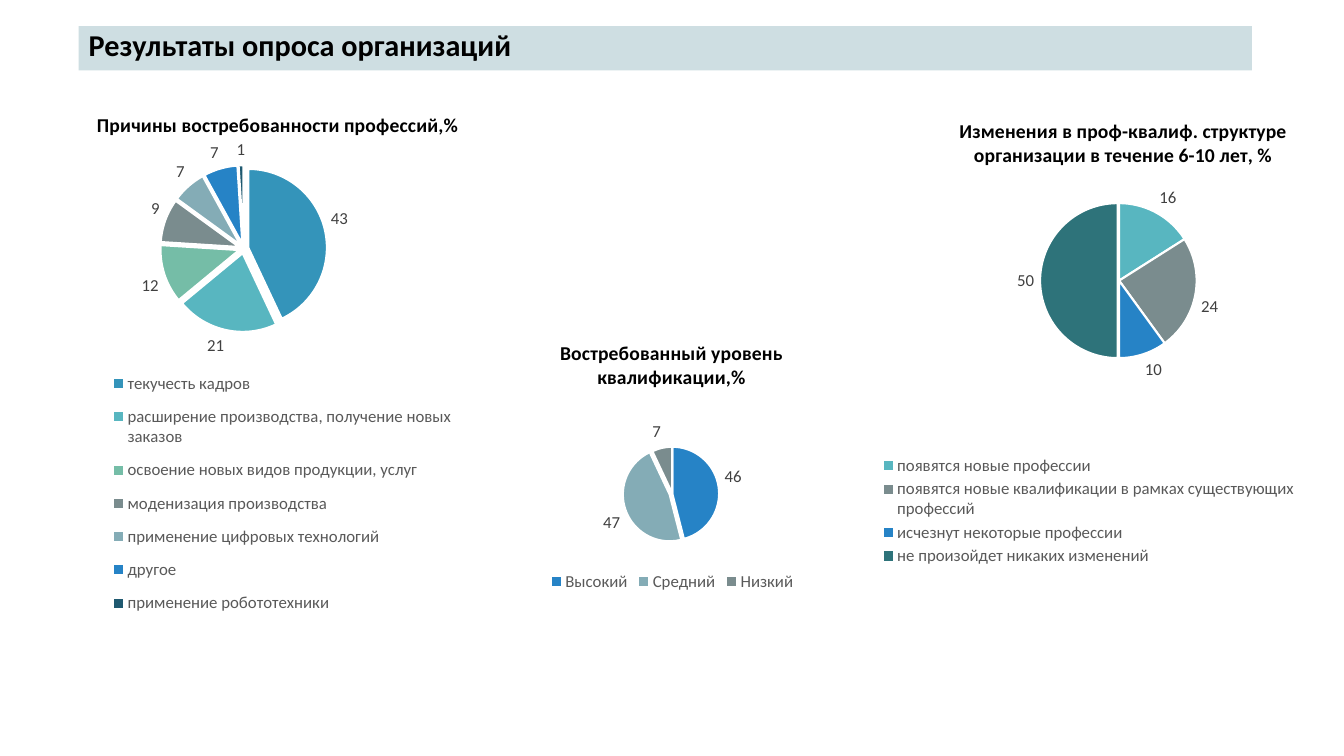
"""Build a slide with three pie charts on an employer survey, chart layouts in percent."""
from pptx import Presentation
from pptx.chart.data import CategoryChartData
from pptx.dml.color import RGBColor
from pptx.enum.chart import XL_CHART_TYPE, XL_LABEL_POSITION, XL_LEGEND_POSITION
from pptx.enum.shapes import MSO_SHAPE
from pptx.enum.text import MSO_ANCHOR, PP_ALIGN
from pptx.oxml import parse_xml
from pptx.oxml.ns import nsdecls
from pptx.util import Pt

PIE = XL_CHART_TYPE.PIE
OUTSIDE = XL_LABEL_POSITION.OUTSIDE_END
BOTTOM = XL_LEGEND_POSITION.BOTTOM
RECTANGLE = MSO_SHAPE.RECTANGLE
MIDDLE = MSO_ANCHOR.MIDDLE
LEFT = PP_ALIGN.LEFT

THEME = {
    "font": "Calibri", "band": "CEDEE2", "gap": "FFFFFF",
    "heading": {"size": 21.6, "bold": True, "color": "000000"},
    "title": {"size": 14, "bold": True, "color": "000000"},
    "base": {"size": 10, "color": "000000"},
    "legend": {"size": 12, "color": "595959"},
    "label": {"size": 12, "color": "404040"},
    "blue": "2683C6", "sky": "3494BA", "teal": "58B6C0", "green": "75BDA7",
    "gray": "7A8C8E", "mist": "84ACB6", "navy": "1F5970", "pine": "2E737A",
}

SLIDE_SIZE = (960, 540)
HEADING = "Результаты опроса организаций"
HEADING_BOX = (56.2, 18.7, 838, 31.7)

SURVEY = [
    {
        "title": "Востребованный уровень квалификации,%",
        "box": (367.2, 239.8, 226.1, 185.8),
        "layouts": {"title": (13.4, 0), "plotArea": (34, 42.7, 32, 36)},
        "answers": [
            ("Высокий", 46, "blue", 0),
            ("Средний", 47, "mist", 6),
            ("Низкий", 7, "gray", 0),
        ],
    },
    {
        "title": "Причины востребованности профессий,%",
        "box": (56.2, 70.6, 349.2, 413.3),
        "layouts": {"title": (3, 1.5),
                    "plotArea": (0.6, 12.3, 66.3, 27.2),
                    "legend": (5.2, 45.2, 73, 46)},
        "answers": [
            ("текучесть кадров", 43, "sky", 6),
            ("расширение производства, получение новых заказов", 21, "teal", 6),
            ("освоение новых видов продукции, услуг", 12, "green", 6),
            ("моденизация производства", 9, "gray", 6),
            ("применение цифровых технологий", 7, "mist", 6),
            ("другое", 7, "blue", 6),
            ("применение робототехники", 1, "navy", 6),
        ],
    },
    {
        "title": "Изменения в проф-квалиф. структуре организации в течение 6-10 лет, %",
        "box": (622.1, 72, 312.5, 335.5),
        "layouts": {"title": (19.4, 2.7),
                    "plotArea": (20.2, 21.8, 73.1, 33),
                    "legend": (1.3, 74.8, 97, 25)},
        "answers": [
            ("появятся новые профессии", 16, "teal", 0),
            ("появятся новые квалификации в рамках существующих профессий", 24, "gray", 0),
            ("исчезнут некоторые профессии", 10, "blue", 0),
            ("не произойдет никаких изменений", 50, "pine", 2),
        ],
    },
]
LAYOUT_INDEX = {"title": 1, "plotArea": 0, "legend": 1}


def style_font(font, role):
    values = THEME[role]
    formats = {"name": THEME["font"], "size": Pt(values["size"]),
               "bold": values.get("bold", False)}
    for key, value in formats.items():
        setattr(font, key, value)
    font.color.rgb = RGBColor.from_string(values["color"])


def place_part(chart, part, percents):
    element = chart._chartSpace.xpath(f".//c:{part}")[0]
    for old in element.xpath("./c:layout"):
        element.remove(old)
    target = '<c:layoutTarget val="inner"/>' if part == "plotArea" else ""
    modes = '<c:xMode val="edge"/><c:yMode val="edge"/>'
    sizes = "".join(f'<c:{key} val="{percent / 100:.3f}"/>'
                    for key, percent in zip("xywh", percents))
    layout = parse_xml(f'<c:layout {nsdecls("c")}><c:manualLayout>'
                       f'{target}{modes}{sizes}</c:manualLayout></c:layout>')
    element.insert(LAYOUT_INDEX[part], layout)


def color_slices(series, answers):
    for index, (_, _, color, explosion) in enumerate(answers):
        look = series.points[index].format
        look.fill.solid()
        look.fill.fore_color.rgb = RGBColor.from_string(THEME[color])
        look.line.color.rgb = RGBColor.from_string(THEME["gap"])
        look.line.width = Pt(1.5)
        if explosion:
            outline = series._element.xpath("./c:dPt")[index].xpath("./c:spPr")[0]
            outline.addprevious(parse_xml(
                f'<c:explosion {nsdecls("c")} val="{explosion}"/>'))


def add_pie(slide, question):
    answers = question["answers"]
    data = CategoryChartData()
    data.categories = [answer[0] for answer in answers]
    data.add_series("Series 1", [answer[1] for answer in answers])
    chart = slide.shapes.add_chart(PIE, *map(Pt, question["box"]), data).chart
    style_font(chart.font, "base")

    chart.has_title = True
    title = chart.chart_title.text_frame.paragraphs[0].add_run()
    title.text = question["title"]
    style_font(title.font, "title")

    chart.has_legend = True
    chart.legend.position = BOTTOM
    chart.legend.include_in_layout = False
    style_font(chart.legend.font, "legend")

    plot = chart.plots[0]
    plot.vary_by_categories = True
    plot.has_data_labels = True
    for key, value in {"show_value": True, "position": OUTSIDE}.items():
        setattr(plot.data_labels, key, value)
    style_font(plot.data_labels.font, "label")
    color_slices(plot.series[0], answers)
    for part, percents in question["layouts"].items():
        place_part(chart, part, percents)


def add_heading(slide):
    band = slide.shapes.add_shape(RECTANGLE, *map(Pt, HEADING_BOX))
    band.shadow.inherit = False
    band.fill.solid()
    band.fill.fore_color.rgb = RGBColor.from_string(THEME["band"])
    band.line.fill.background()
    frame = band.text_frame
    formats = {"word_wrap": True, "vertical_anchor": MIDDLE,
               "margin_top": Pt(0), "margin_bottom": Pt(3)}
    for key, value in formats.items():
        setattr(frame, key, value)
    paragraph = frame.paragraphs[0]
    paragraph.alignment = LEFT
    paragraph.line_spacing = 0.9
    heading = paragraph.add_run()
    heading.text = HEADING
    style_font(heading.font, "heading")


def main():
    deck = Presentation()
    deck.slide_width, deck.slide_height = map(Pt, SLIDE_SIZE)
    slide = deck.slides.add_slide(deck.slide_layouts[6])
    add_heading(slide)
    for question in SURVEY:
        add_pie(slide, question)
    deck.save("out.pptx")


if __name__ == "__main__":
    main()
